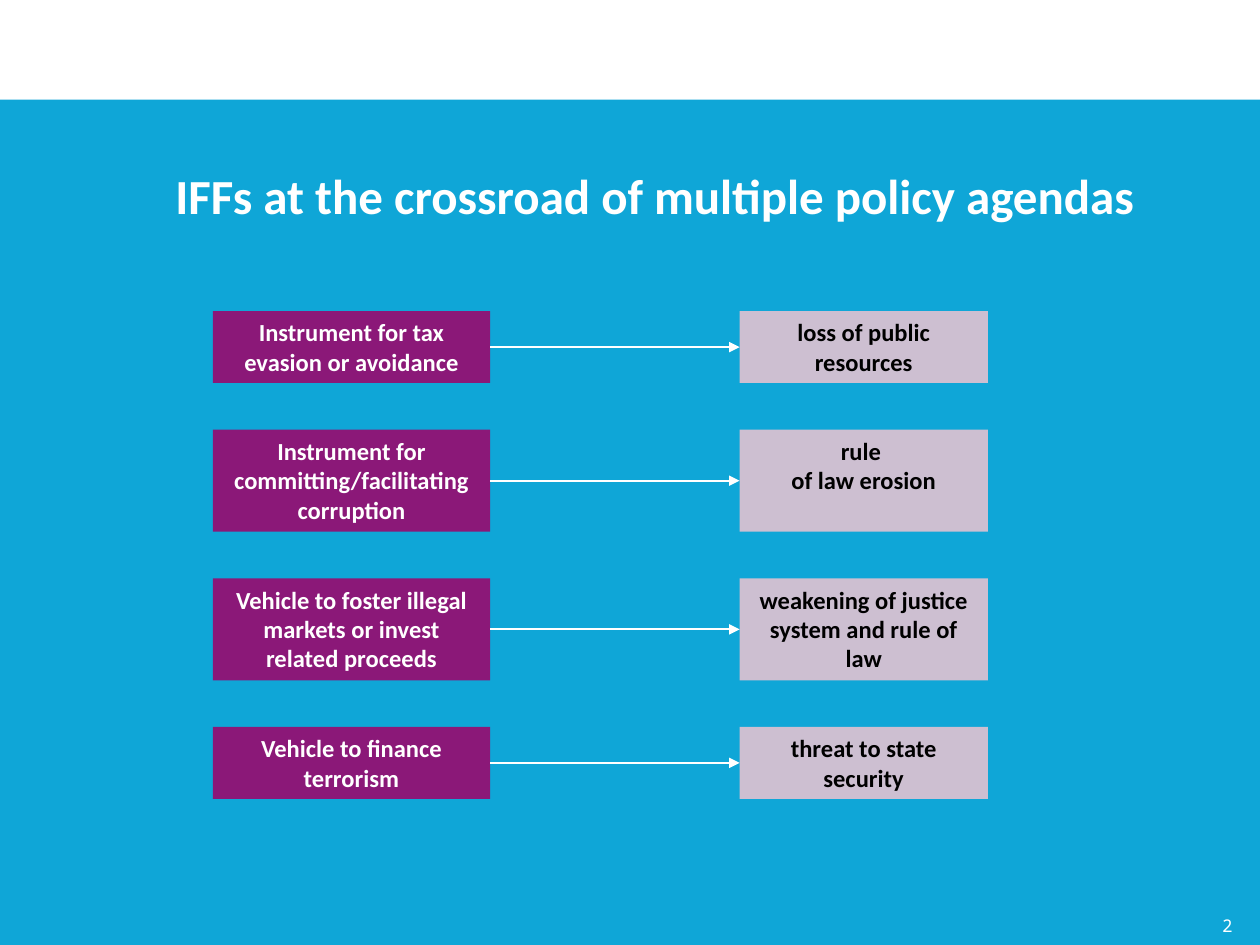
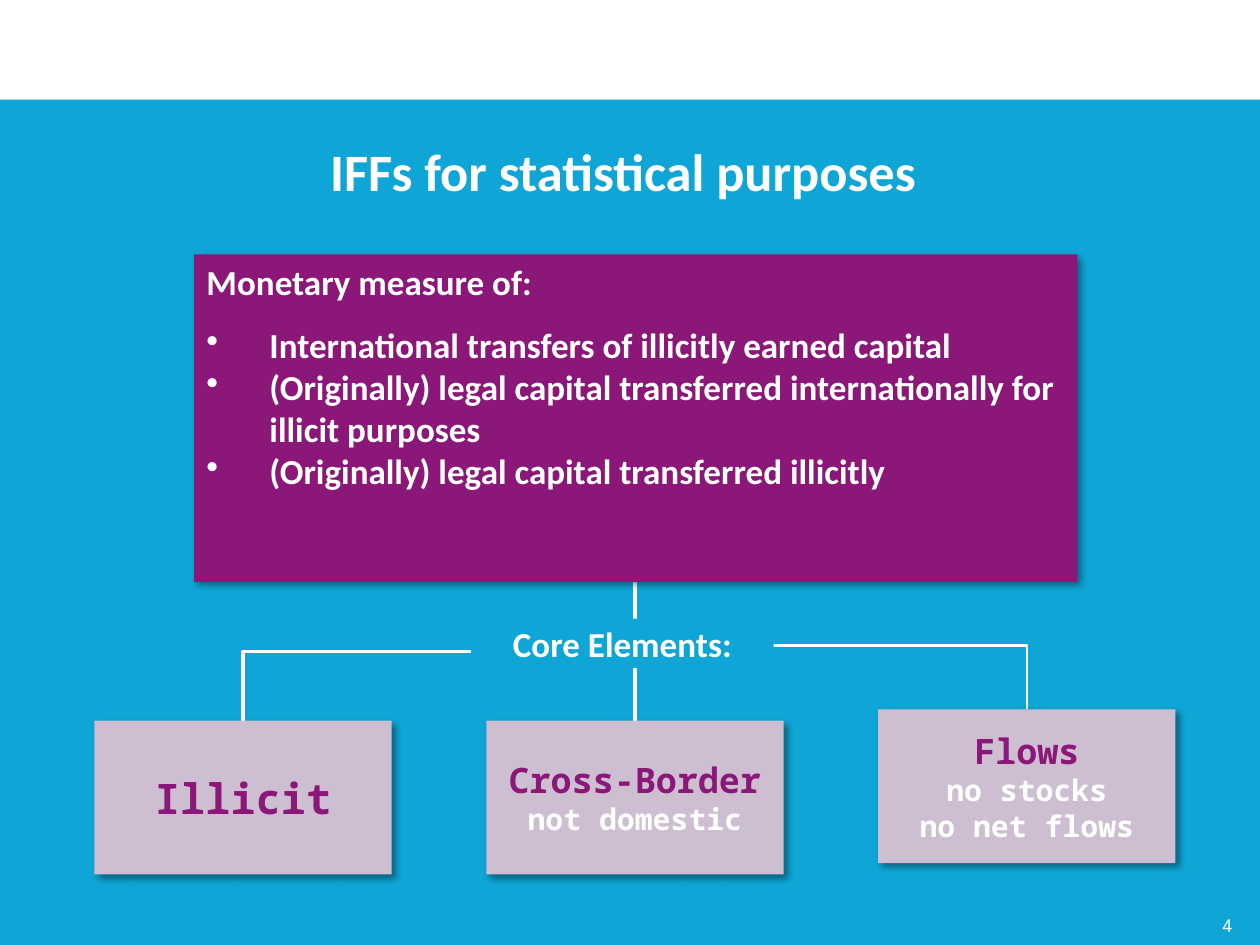
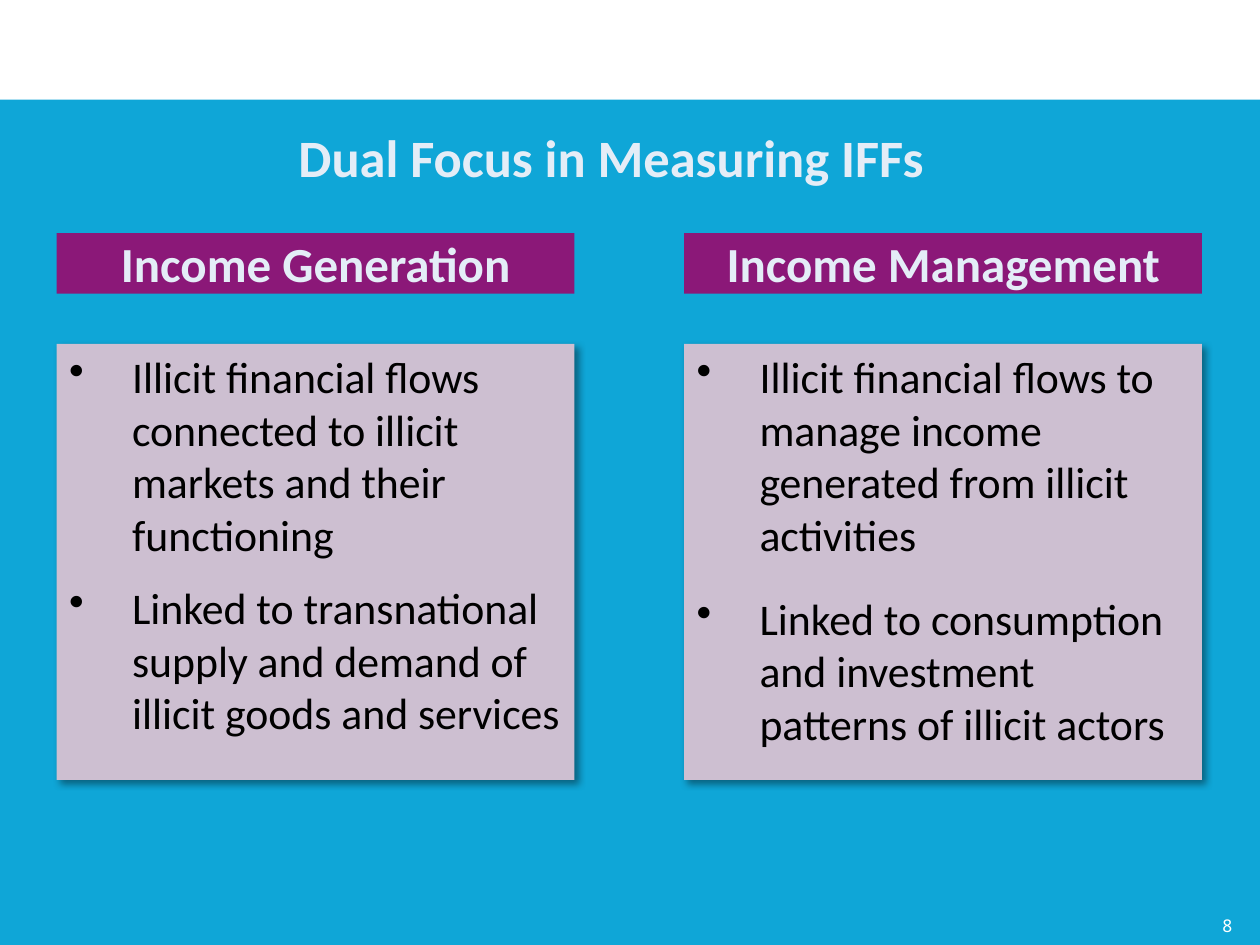
"""Build three slides on illicit financial flows and how to measure them."""
from lxml.etree import SubElement
from pptx import Presentation
from pptx.dml.color import RGBColor
from pptx.enum.shapes import MSO_CONNECTOR, MSO_SHAPE
from pptx.enum.text import MSO_ANCHOR, PP_ALIGN
from pptx.oxml.ns import qn
from pptx.util import Inches, Pt

COLORS = {
    "sky": "0FA6D7",
    "plum": "8B1878",
    "lilac": "CDBFD1",
    "white": "FFFFFF",
    "pale": "E4EDF7",
    "black": "000000",
}
SANS, MONO = "Calibri", "Noto Sans Mono"
COLS, ROWS = 100, 75


class Deck:
    """Holds the style and the current slide; lengths are grid columns and rows."""

    def __init__(self):
        self.prs = Presentation()
        self.prs.slide_width, self.prs.slide_height = Inches(10), Inches(7.5)
        self.fill(self.prs.slide_master.background, "sky")
        self.s = None

    def color(self, name):
        return RGBColor.from_string(COLORS[name])

    def fill(self, target, name):
        target.fill.solid()
        target.fill.fore_color.rgb = self.color(name)

    def grid(self, *lengths):
        """Turn alternating columns and rows into slide units."""
        steps = self.prs.slide_width / COLS, self.prs.slide_height / ROWS
        return [round(n * steps[i % 2]) for i, n in enumerate(lengths)]

    def slide(self, number):
        self.s = self.prs.slides.add_slide(self.prs.slide_layouts[6])
        self.box(0, 0, 100, 7.9, "white")
        tf = self.textbox(92.5, 72.1, 6.3, 2.7)
        self.para(tf, number, 10, font=MONO, bold=False, align=PP_ALIGN.RIGHT)

    def textbox(self, x, y, w, h, anchor=MSO_ANCHOR.TOP):
        tf = self.s.shapes.add_textbox(*self.grid(x, y, w, h)).text_frame
        tf.word_wrap, tf.vertical_anchor = True, anchor
        return tf

    def title(self, x, y, w, h, text, size=30, color="white"):
        self.para(self.textbox(x, y, w, h, MSO_ANCHOR.MIDDLE), text, size, color)

    def box(self, x, y, w, h, color, anchor=MSO_ANCHOR.TOP, shadow=False):
        sp = self.s.shapes.add_shape(MSO_SHAPE.RECTANGLE, *self.grid(x, y, w, h))
        self.fill(sp, color)
        sp.line.fill.background()
        sp.shadow.inherit = False
        if shadow:
            self.cast_shadow(sp)
        tf = sp.text_frame
        tf.word_wrap, tf.vertical_anchor = True, anchor
        return tf

    def cast_shadow(self, sp):
        effects = sp._element.spPr.find(qn("a:effectLst"))
        outer = SubElement(effects, qn("a:outerShdw"), blurRad=str(Pt(4)),
                           dist=str(Pt(3)), dir=str(45 * 60000), algn="tl", rotWithShape="0")
        rgb = SubElement(outer, qn("a:srgbClr"), val=COLORS["black"])
        SubElement(rgb, qn("a:alpha"), val="40000")

    def para(self, tf, text, size, color="white", font=SANS, bold=True,
             align=PP_ALIGN.CENTER, bullet=False, before=0):
        p = tf.paragraphs[0]
        if p.runs:
            p = tf.add_paragraph()
            p.space_before = Pt(before)
        p.alignment = align
        if bullet:
            pPr = p._p.get_or_add_pPr()
            pPr.set("marL", str(Inches(0.5)))
            pPr.set("indent", str(-Inches(0.5)))
            SubElement(pPr, qn("a:buChar"), char="•")
        for i, line in enumerate(text.split("\n")):
            if i:
                p.add_line_break()
            r = p.add_run()
            r.text = line
            r.font.size, r.font.name, r.font.bold = Pt(size), font, bold
            r.font.color.rgb = self.color(color)

    def line(self, x1, y1, x2, y2, width, kind=MSO_CONNECTOR.STRAIGHT, arrow=False):
        cxn = self.s.shapes.add_connector(kind, *self.grid(x1, y1, x2, y2))
        cxn.line.color.rgb = self.color("white")
        cxn.line.width = Pt(width)
        if arrow:
            SubElement(cxn.line._get_or_add_ln(), qn("a:tailEnd"), type="triangle")
        SubElement(cxn._element.spPr, qn("a:effectLst"))
        return cxn

    def elbow(self, x1, y1, x2, y2, width):
        """Run down, across and down again, as a turned elbow connector."""
        cx, cy = (x1 + x2) / 2, (y1 + y2) / 2
        across, down = abs(x2 - x1) / 2, (y2 - y1) / 2
        cxn = self.line(cx - down, cy - across, cx + down, cy + across,
                        width, MSO_CONNECTOR.ELBOW)
        xfrm = cxn._element.spPr.find(qn("a:xfrm"))
        xfrm.set("rot", str((270 if x2 > x1 else 90) * 60000))
        if x2 > x1:
            xfrm.set("flipH", "1")


def policy_agendas(deck):
    deck.slide("2")
    deck.title(6.7, 10.4, 90.5, 10.1, "IFFs at the crossroad of multiple policy agendas", 28)
    links = [
        ("Instrument for tax evasion or avoidance", "loss of public resources", 5.7),
        ("Instrument for committing/facilitating corruption", "rule \nof law erosion", 8.1),
        ("Vehicle to foster illegal markets or invest related proceeds",
         "weakening of justice system and rule of law", 8.1),
        ("Vehicle to finance terrorism", "threat to state security", 5.7),
    ]
    cause_x, cause_w, effect_x, effect_w = 16.9, 22, 58.7, 19.7
    y, gap = 24.7, 3.7
    for cause, effect, h in links:
        deck.para(deck.box(cause_x, y, cause_w, h, "plum"), cause, 14)
        deck.para(deck.box(effect_x, y, effect_w, h, "lilac"), effect, 14, "black")
        deck.line(cause_x + cause_w, y + h / 2, effect_x, y + h / 2, 1, arrow=True)
        y += h + gap


def statistical_purposes(deck):
    deck.slide("4")
    deck.title(4.3, 9.2, 91.3, 8.6, "IFFs for statistical purposes ")
    mid, fork, step, card_w = 50.4, 46.2, 31.1, 23.6
    deck.line(mid, fork, mid, 57.2, 1.75)
    deck.elbow(mid, fork, mid + step, 56.3, 1.5)
    deck.elbow(mid, fork, mid - step, 57.2, 2)

    tf = deck.box(15.4, 20.2, 70.1, 26, "plum", shadow=True)
    deck.para(tf, "Monetary measure of:", 20, align=PP_ALIGN.LEFT)
    measures = [
        "International transfers of illicitly earned capital",
        "(Originally) legal capital transferred internationally for illicit purposes",
        "(Originally) legal capital transferred illicitly",
    ]
    for i, measure in enumerate(measures):
        deck.para(tf, measure, 20, align=PP_ALIGN.LEFT, bullet=True, before=0 if i else 12)

    elements = [
        ("Illicit", 24, 57.2, []),
        ("Cross-Border", 20, 57.2, ["not domestic"]),
        ("Flows", 20, 56.3, ["no stocks", "no net flows"]),
    ]
    for i, (name, size, y, limits) in enumerate(elements):
        x = mid + (i - 1) * step - card_w / 2
        tf = deck.box(x, y, card_w, 12.2, "lilac", MSO_ANCHOR.MIDDLE, shadow=True)
        deck.para(tf, name, size, "plum", MONO)
        for limit in limits:
            deck.para(tf, limit, 17, font=MONO)
    deck.para(deck.box(37.4, 49.1, 24, 3.9, "sky", MSO_ANCHOR.MIDDLE), "Core Elements:", 20)


def dual_focus(deck):
    deck.slide("8")
    deck.title(0, 9.4, 98, 6.1, "Dual Focus in Measuring IFFs ", color="pale")
    focuses = [
        ("Income Generation", 12, [
            "Illicit financial flows connected to illicit markets and their functioning",
            "Linked to transnational supply and demand of illicit goods and services"]),
        ("Income Management", 18, [
            "Illicit financial flows to manage income generated from illicit activities",
            "Linked to consumption and investment patterns of illicit actors"]),
    ]
    for i, (heading, before, points) in enumerate(focuses):
        x, w = 4.5 + i * 49.8, 41.1
        deck.para(deck.box(x, 18.5, w, 4.8, "plum", MSO_ANCHOR.MIDDLE), heading, 28, "pale")
        tf = deck.box(x, 27.3, w, 34.6, "lilac", shadow=True)
        for point in points:
            deck.para(tf, point, 25, "black", bold=False, align=PP_ALIGN.LEFT,
                      bullet=True, before=before)


def main():
    deck = Deck()
    policy_agendas(deck)
    statistical_purposes(deck)
    dual_focus(deck)
    deck.prs.save("out.pptx")


if __name__ == "__main__":
    main()
